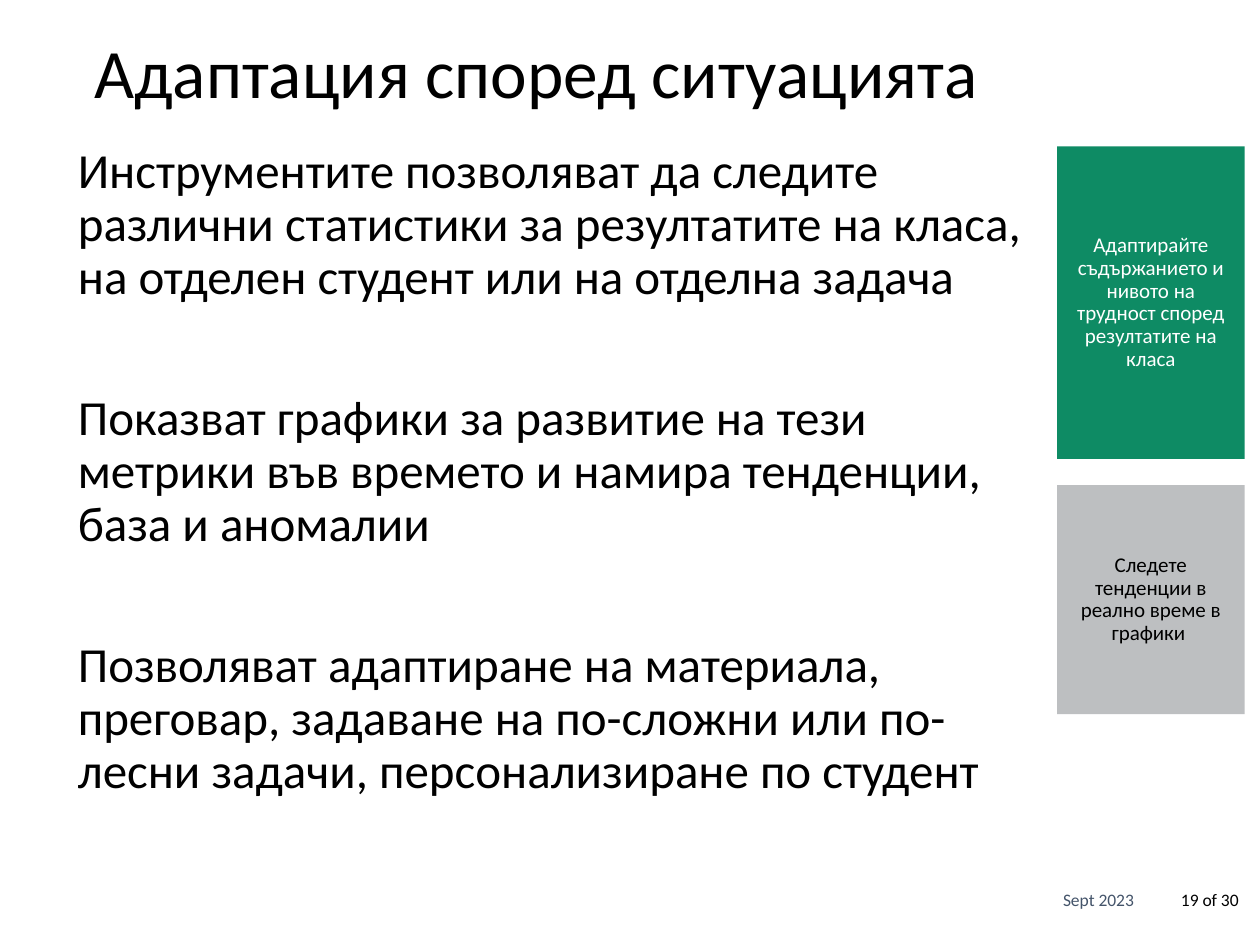
from pptx import Presentation, util as u
from pptx.dml.color import RGBColor
from pptx.enum import shapes, text

COLORS = {
    "text": "000000",
    "date": "44546A",
    "green": "0E8B64",
    "gray": "BDBFC1",
    "white": "FFFFFF",
}


class SlideBuilder:
    font = "Calibri"
    line_spacing = 0.9

    def __init__(self, slide):
        self.slide = slide

    def set_text(self, shape, paragraphs, size, color, align, anchor, gap=0):
        frame = shape.text_frame
        frame.word_wrap = True
        frame.vertical_anchor = anchor
        for index, content in enumerate(paragraphs):
            paragraph = frame.add_paragraph() if index else frame.paragraphs[0]
            paragraph.text = content
            paragraph.alignment = align
            paragraph.line_spacing = self.line_spacing
            paragraph.space_before = u.Pt(gap if index else 0)
            paragraph.font.name = self.font
            paragraph.font.size = u.Pt(size)
            paragraph.font.color.rgb = RGBColor.from_string(COLORS[color])

    def text_box(self, box, paragraphs, size, color="text",
                 align=text.PP_ALIGN.LEFT, anchor=text.MSO_ANCHOR.MIDDLE, gap=0):
        shape = self.slide.shapes.add_textbox(*map(u.Cm, box))
        self.set_text(shape, paragraphs, size, color, align, anchor, gap)

    def panel(self, box, content, fill, color):
        shape = self.slide.shapes.add_shape(
            shapes.MSO_SHAPE.RECTANGLE, *map(u.Cm, box))
        shape.shadow.inherit = False
        shape.fill.solid()
        shape.fill.fore_color.rgb = RGBColor.from_string(COLORS[fill])
        shape.line.fill.background()
        self.set_text(shape, [content], 12, color,
                      text.PP_ALIGN.CENTER, text.MSO_ANCHOR.MIDDLE)


def main():
    presentation = Presentation()
    presentation.slide_width = u.Cm(25.4)
    presentation.slide_height = u.Cm(19.05)
    builder = SlideBuilder(
        presentation.slides.add_slide(presentation.slide_layouts[6]))

    # Footer: date and page number
    builder.text_box((21.18, 17.65, 2.16, 1.02), ["Sept 2023"], 10, "date")
    builder.text_box((23.34, 17.65, 1.88, 1.02), ["19 of 30"], 10,
                     align=text.PP_ALIGN.RIGHT)

    # Title
    builder.text_box((1.65, 0.56, 18.67, 1.96),
                     ["Адаптация според ситуацията"], 39.6)

    # Main text
    builder.text_box((1.32, 2.82, 19.69, 15.8), [
        "Инструментите позволяват да следите различни статистики за "
        "резултатите на класа, на отделен студент или на отделна задача",
        "Показват графики за развитие на тези метрики във времето и намира "
        "тенденции, база и аномалии",
        "Позволяват адаптиране на материала, преговар, задаване на по-сложни "
        "или по-лесни задачи, персонализиране по студент",
    ], 28, anchor=text.MSO_ANCHOR.TOP, gap=50.5)

    # Side panels
    left, width = 21.31, 3.78
    builder.panel((left, 2.95, width, 6.3),
                  "Адаптирайте съдържанието и нивото на трудност според "
                  "резултатите на класа", "green", "white")
    builder.panel((left, 9.78, width, 4.62),
                  "Следете тенденции в реално време в графики ",
                  "gray", "text")

    presentation.save("out.pptx")


if __name__ == "__main__":
    main()
